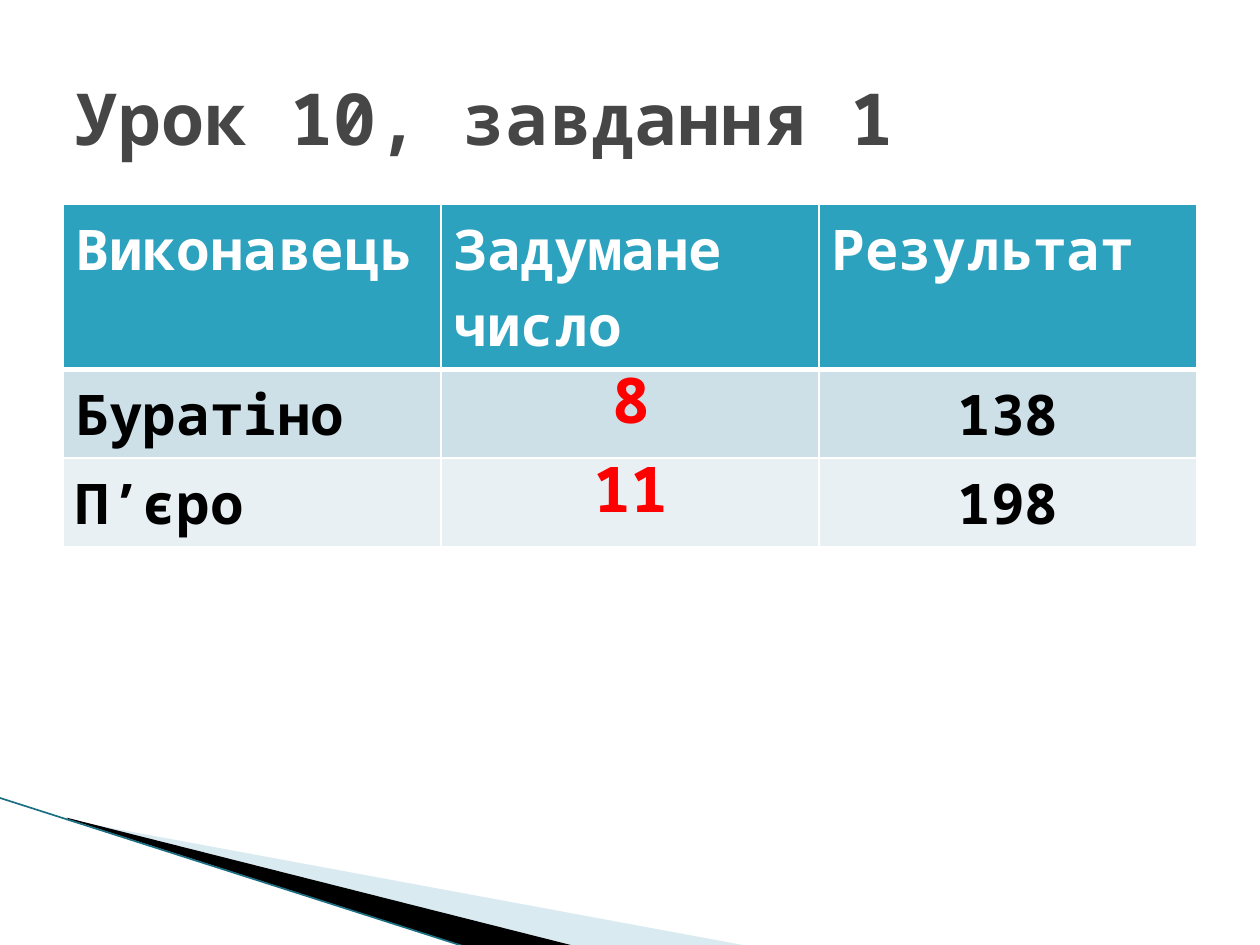
from lxml import etree
from pptx import Presentation
from pptx.dml.color import RGBColor
from pptx.enum.shapes import MSO_CONNECTOR
from pptx.enum.text import MSO_ANCHOR, PP_ALIGN
from pptx.oxml.ns import qn
from pptx.util import Inches, Pt

STRAIGHT = MSO_CONNECTOR.STRAIGHT
TOP, MIDDLE = MSO_ANCHOR.TOP, MSO_ANCHOR.MIDDLE
LEFT, CENTER = PP_ALIGN.LEFT, PP_ALIGN.CENTER

FONT = "Noto Sans Mono"
COLORS = {
    "white": "FFFFFF", "black": "000000", "title": "464646", "answer": "FF0000",
    "header": "2DA2BF", "odd row": "CDE0E8", "even row": "E8F0F4",
    "pale wedge": "A0CBDC", "edge": "1C6F82",
}


def color(name):
    return RGBColor.from_string(COLORS[name])


def grid(units):
    """The slide is 20 columns by 15 rows of half an inch."""
    return Inches(units / 2)


def write(frame, text, size=32, ink="black", align=LEFT):
    paragraph = frame.paragraphs[0]
    paragraph.alignment = align
    run = paragraph.add_run()
    run.text = text
    run.font.name, run.font.size, run.font.bold = FONT, Pt(size), True
    run.font.color.rgb = color(ink)


class LessonSlide:
    def __init__(self, presentation):
        self.slide = presentation.slides.add_slide(presentation.slide_layouts[6])
        self.shapes = self.slide.shapes

    def wedge(self, points, box, fill, opacity=100):
        corners = [(grid(x), grid(y)) for x, y in points]
        builder = self.shapes.build_freeform(*corners[0])
        builder.add_line_segments(corners[1:], close=True)
        shape = builder.convert_to_shape()
        self.reframe(shape, *map(grid, box))
        shape.shadow.inherit = False
        shape.line.fill.background()
        shape.fill.solid()
        shape.fill.fore_color.rgb = color(fill)
        if opacity < 100:
            tint = shape.element.spPr.find(".//" + qn("a:srgbClr"))
            etree.SubElement(tint, qn("a:alpha"), val=str(opacity * 1000))

    def reframe(self, shape, left, top, width, height):
        """Give the shape a new frame while its outline stays in place."""
        outline = shape.element.spPr.find(".//" + qn("a:path"))
        outline.set("w", str(width))
        outline.set("h", str(height))
        for point in outline.iter(qn("a:pt")):
            point.set("x", str(int(point.get("x")) + shape.left - left))
            point.set("y", str(int(point.get("y")) + shape.top - top))
        shape.left, shape.top, shape.width, shape.height = left, top, width, height

    def line(self, start, end, ink, width):
        connector = self.shapes.add_connector(STRAIGHT, *map(grid, start + end))
        connector.line.color.rgb = color(ink)
        connector.line.width = Pt(width)
        etree.SubElement(connector.element.spPr, qn("a:effectLst"))

    def text(self, text, box, anchor=TOP, **style):
        frame = self.shapes.add_textbox(*map(grid, box)).text_frame
        frame.word_wrap = True
        frame.vertical_anchor = anchor
        write(frame, text, **style)

    def table(self, rows, box, heights, fills):
        table = self.shapes.add_table(len(rows), len(rows[0]), *map(grid, box)).table
        for index, (values, height, fill) in enumerate(zip(rows, heights, fills)):
            table.rows[index].height = grid(height)
            for column, value in enumerate(values):
                cell = table.cell(index, column)
                is_header = index == 0
                if value:
                    write(cell.text_frame, value,
                          ink="white" if is_header else "black",
                          align=CENTER if value.isdigit() else LEFT)
                self.borders(cell, top=3 if index == 1 else 1,
                             bottom=3 if is_header else 1)
                cell.fill.solid()
                cell.fill.fore_color.rgb = color(fill)

    def borders(self, cell, top, bottom):
        properties = cell._tc.get_or_add_tcPr()
        for side, width in (("L", 1), ("R", 1), ("T", top), ("B", bottom)):
            edge = etree.SubElement(properties, qn("a:ln" + side), w=str(Pt(width)))
            fill = etree.SubElement(edge, qn("a:solidFill"))
            etree.SubElement(fill, qn("a:srgbClr"), val=COLORS["white"])


def main():
    presentation = Presentation()
    presentation.slide_width, presentation.slide_height = grid(20), grid(15)
    lesson = LessonSlide(presentation)

    # Corner decoration
    lesson.wedge([(1.1, 13.02), (11.9, 15.02), (9.12, 15.02), (1.1, 13)],
                 (1.56, 10.94, 8.32, 3.16), "pale wedge", 40)
    lesson.wedge([(1.06, 12.98), (9.14, 15.02), (7.44, 15.04), (1.08, 13)],
                 (-0.12, 12.66, 8.32, 1.84), "black")
    lesson.line((-0.02, 12.66), (7.42, 15.04), "edge", 0.95)

    # Results table
    lesson.table(
        [("Виконавець", "Задумане число", "Результат"),
         ("Буратіно", "", "138"),
         ("П’єро", "", "198")],
        box=(1, 3.24, 18, 5.4), heights=(2.6, 1.4, 1.4),
        fills=("header", "odd row", "even row"))

    # Title and answers
    lesson.text("Урок 10, завдання 1", (1, 0.6, 18, 2.5), MIDDLE, size=41, ink="title")
    for answer, left, top in (("8", 9.53, 5.62), ("11", 9.22, 7.04)):
        lesson.text(answer, (left, top, 2.34, 1.42), size=36, ink="answer")

    presentation.save("out.pptx")


if __name__ == "__main__":
    main()
